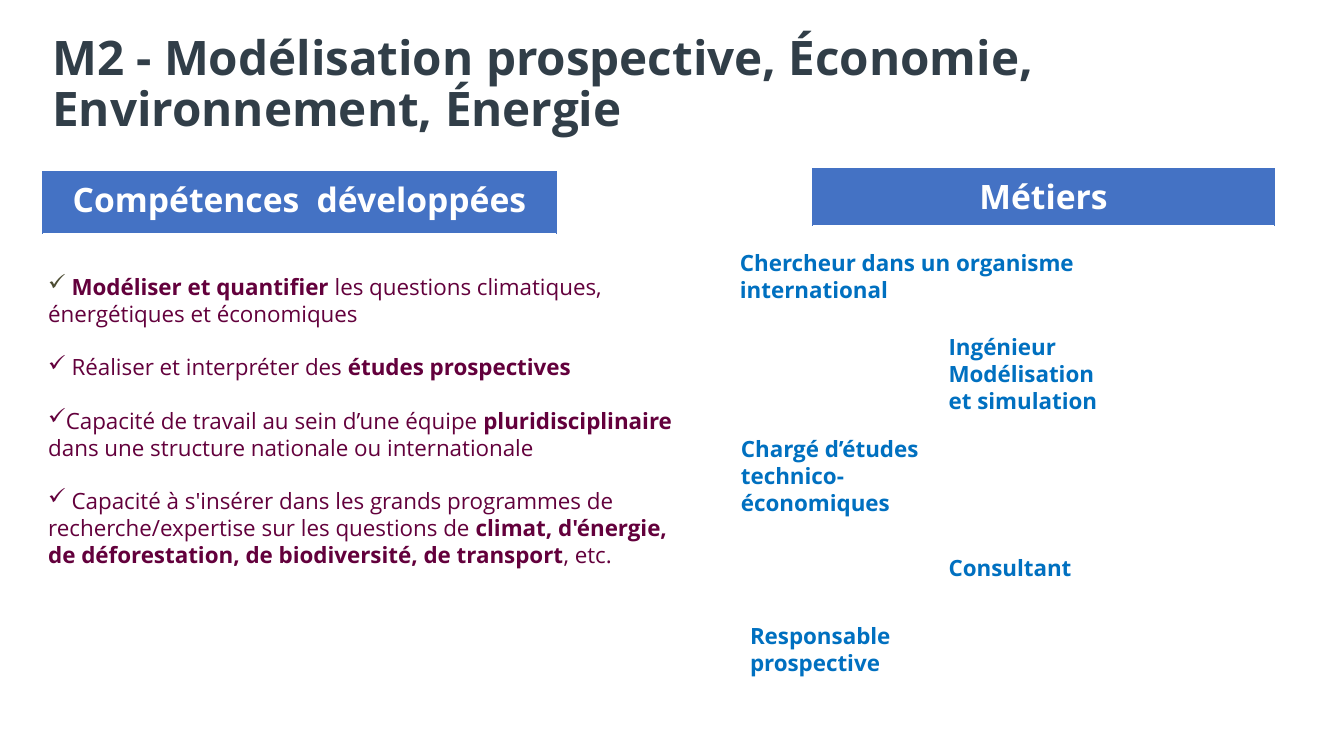
from dataclasses import dataclass

from lxml.etree import SubElement
from pptx import Presentation
from pptx.dml.color import RGBColor
from pptx.enum.text import MSO_ANCHOR, PP_ALIGN
from pptx.oxml.ns import qn
from pptx.util import Inches, Pt


@dataclass(frozen=True)
class Theme:
    font: str = "Open Sans"
    title: str = "313E48"
    check: str = "4C4C33"
    skill: str = "63003C"
    job: str = "0070C0"
    header: str = "4472C4"
    white: str = "FFFFFF"
    title_size: int = 34
    header_size: int = 24
    body_size: int = 16
    skill_gap: int = 19


@dataclass(frozen=True)
class Box:
    left: float
    top: float
    width: float
    height: float

    def inches(self) -> list:
        return [Inches(v) for v in (self.left, self.top, self.width, self.height)]


@dataclass(frozen=True)
class Span:
    text: str
    bold: bool = False
    color: str = Theme.skill


@dataclass(frozen=True)
class Header:
    text: str
    box: Box


@dataclass(frozen=True)
class Job:
    lines: tuple[str, ...]
    box: Box


THEME = Theme()
TITLE = "M2 - Modélisation prospective, Économie, Environnement, Énergie"
TITLE_BOX = Box(0.42, 0.23, 12.68, 1.24)
SKILLS_BOX = Box(0.38, 2.66, 6.59, 3.33)

HEADERS = [
    Header("Compétences  développées", Box(0.42, 1.7, 5.1, 0.62)),
    Header("Métiers", Box(8.06, 1.67, 4.58, 0.57)),
]

SKILLS = [
    [Span(" ", True, THEME.check), Span("Modéliser et quantifier ", True),
     Span("les questions climatiques, énergétiques et économiques")],
    [Span(" Réaliser et interpréter des "), Span("études prospectives", True)],
    [Span("Capacité de travail au sein d’une équipe "),
     Span("pluridisciplinaire ", True),
     Span("dans une structure nationale ou internationale")],
    [Span(" Capacité à s'insérer dans les grands programmes de "
          "recherche/expertise sur les questions de "),
     Span("climat, d'énergie, de déforestation, de biodiversité, de transport", True),
     Span(", etc.")],
]

JOBS = [
    Job(("Chercheur dans un organisme international",), Box(7.24, 2.42, 3.79, 0.64)),
    Job(("Ingénieur Modélisation", "et simulation"), Box(9.31, 3.26, 2.72, 0.91)),
    Job(("Chargé d’études technico-économiques",), Box(7.25, 4.27, 2.49, 0.91)),
    Job(("Consultant",), Box(9.31, 5.45, 1.97, 0.37)),
    Job(("Responsable prospective",), Box(7.34, 6.12, 2.25, 0.91)),
]


def add_run(p, span: Span, size: int) -> None:
    r = p.add_run()
    r.text = span.text
    r.font.name = THEME.font
    r.font.size = Pt(size)
    r.font.bold = span.bold
    r.font.color.rgb = RGBColor.from_string(span.color)


def add_text(slide, box: Box, paragraphs: list[list[Span]], size: int):
    tf = slide.shapes.add_textbox(*box.inches()).text_frame
    tf.word_wrap = True
    for i, spans in enumerate(paragraphs):
        p = tf.add_paragraph() if i else tf.paragraphs[0]
        for span in spans:
            add_run(p, span, size)
    return tf


def add_check(p) -> None:
    pPr = p._p.get_or_add_pPr()
    pPr.set("marL", "0")
    pPr.set("indent", "0")
    SubElement(pPr, qn("a:buChar"), char="✓")


def set_border(cell, index: int, side: str, color: str, width: float) -> None:
    tcPr = cell._tc.get_or_add_tcPr()
    ln = SubElement(tcPr, qn(f"a:ln{side}"), w=str(Pt(width)))
    fill = SubElement(ln, qn("a:solidFill"))
    SubElement(fill, qn("a:srgbClr"), val=color)
    tcPr.insert(index, ln)


def add_header(slide, header: Header) -> None:
    table = slide.shapes.add_table(1, 1, *header.box.inches()).table
    cell = table.cell(0, 0)
    cell.fill.solid()
    cell.fill.fore_color.rgb = RGBColor.from_string(THEME.header)
    for i, side in enumerate("LRT"):
        set_border(cell, i, side, THEME.header, 0.5)
    set_border(cell, 3, "B", THEME.white, 1)
    p = cell.text_frame.paragraphs[0]
    p.alignment = PP_ALIGN.CENTER
    add_run(p, Span(header.text, True, THEME.white), THEME.header_size)


def add_skills(slide) -> None:
    tf = add_text(slide, SKILLS_BOX, SKILLS, THEME.body_size)
    for i, p in enumerate(tf.paragraphs):
        if i:
            p.space_before = Pt(THEME.skill_gap)
        add_check(p)


def main() -> None:
    prs = Presentation()
    prs.slide_width, prs.slide_height = Inches(13.33), Inches(7.5)
    slide = prs.slides.add_slide(prs.slide_layouts[6])

    # Title
    tf = add_text(slide, TITLE_BOX, [[Span(TITLE, True, THEME.title)]], THEME.title_size)
    tf.vertical_anchor = MSO_ANCHOR.MIDDLE
    tf.paragraphs[0].line_spacing = 0.9

    # Column headers
    for header in HEADERS:
        add_header(slide, header)

    # Skills on the left, jobs on the right
    add_skills(slide)
    for job in JOBS:
        lines = [[Span(line, True, THEME.job)] for line in job.lines]
        add_text(slide, job.box, lines, THEME.body_size)

    prs.save("out.pptx")


if __name__ == "__main__":
    main()
